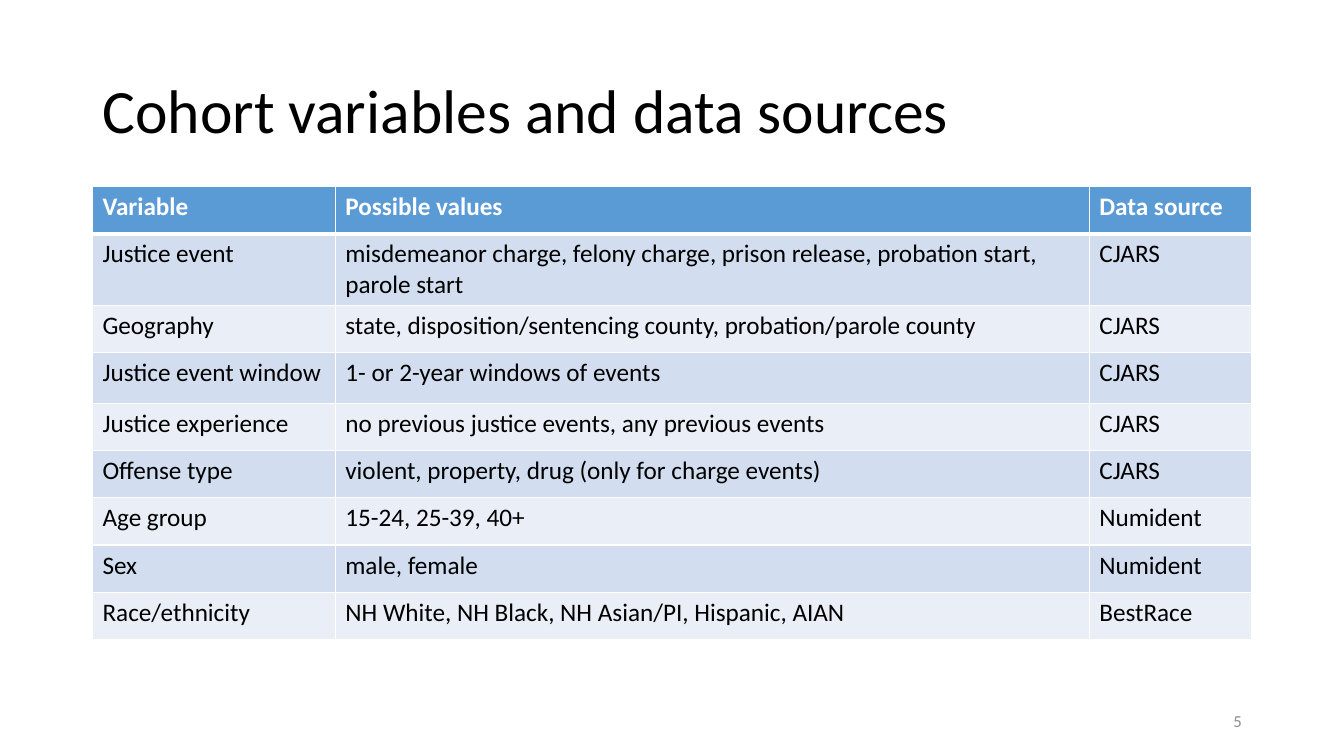
from lxml.etree import SubElement
from pptx import Presentation
from pptx.dml.color import RGBColor
from pptx.enum.text import MSO_ANCHOR as Anchor, MSO_AUTO_SIZE as AutoSize, PP_ALIGN as Align
from pptx.oxml.ns import qn
from pptx.util import Cm, Pt

FONT = "Calibri"
BLACK = RGBColor(0x00, 0x00, 0x00)
WHITE = RGBColor(0xFF, 0xFF, 0xFF)
GREY = RGBColor(0x8C, 0x8C, 0x8C)
HEADER_BLUE = RGBColor(0x5B, 0x9B, 0xD5)
BAND_DARK = RGBColor(0xD2, 0xDE, 0xEF)
BAND_LIGHT = RGBColor(0xEA, 0xEF, 0xF7)

MARGIN, CONTENT_WIDTH = 2.33, 29.21
COLUMN_WIDTHS = (6.12, 19, 4.09)
ROW_HEIGHTS = (1.19, 1.78, 1.19, 1.28, 1.19, 1.19, 1.19, 1.19, 1.19)

COHORT_ROWS = (
    ("Variable", "Possible values", "Data source"),
    ("Justice event",
     "misdemeanor charge, felony charge, prison release, probation start, parole start", "CJARS"),
    ("Geography", "state, disposition/sentencing county, probation/parole county", "CJARS"),
    ("Justice event window", "1- or 2-year windows of events", "CJARS"),
    ("Justice experience", "no previous justice events, any previous events", "CJARS"),
    ("Offense type", "violent, property, drug (only for charge events)", "CJARS"),
    ("Age group", "15-24, 25-39, 40+", "Numident"),
    ("Sex", "male, female", "Numident"),
    ("Race/ethnicity", "NH White, NH Black, NH Asian/PI, Hispanic, AIAN", "BestRace"),
)


def format_paragraph(paragraph, size, color, bold=False, align=Align.LEFT):
    paragraph.alignment = align
    font = paragraph.font
    font.name, font.size, font.bold = FONT, Pt(size), bold
    font.color.rgb = color


def set_borders(cell, widths):
    """Draw white borders; widths maps a side (L, R, T, B) to points."""
    properties = cell._tc.get_or_add_tcPr()
    for side, width in widths.items():
        line = SubElement(properties, qn(f"a:ln{side}"), w=str(Pt(width)))
        fill = SubElement(line, qn("a:solidFill"))
        SubElement(fill, qn("a:srgbClr"), val=str(WHITE))


def add_title(slide, text):
    title = slide.shapes.title
    title.left, title.top = Cm(MARGIN), Cm(1.01)
    title.width, title.height = Cm(CONTENT_WIDTH), Cm(3.68)
    frame = title.text_frame
    frame.text = text
    frame.auto_size = AutoSize.NONE
    frame.vertical_anchor = Anchor.MIDDLE
    heading = frame.paragraphs[0]
    heading.line_spacing = 0.9
    format_paragraph(heading, 44, BLACK)


def add_cohort_table(slide):
    table = slide.shapes.add_table(
        len(COHORT_ROWS), len(COLUMN_WIDTHS), Cm(MARGIN), Cm(4.7),
        Cm(CONTENT_WIDTH), Cm(sum(ROW_HEIGHTS))).table
    for column, width in zip(table.columns, COLUMN_WIDTHS):
        column.width = Cm(width)
    for row, height in zip(table.rows, ROW_HEIGHTS):
        row.height = Cm(height)

    for row_index, entries in enumerate(COHORT_ROWS):
        is_header = row_index == 0
        band = HEADER_BLUE if is_header else BAND_DARK if row_index % 2 else BAND_LIGHT
        # The header and the first data row share a thicker rule
        borders = {"L": 1, "R": 1, "T": 3 if row_index == 1 else 1, "B": 3 if is_header else 1}
        for column_index, entry in enumerate(entries):
            cell = table.cell(row_index, column_index)
            cell.text = entry
            format_paragraph(cell.text_frame.paragraphs[0], 18,
                             WHITE if is_header else BLACK, bold=is_header)
            set_borders(cell, borders)
            cell.fill.solid()
            cell.fill.fore_color.rgb = band


def add_page_number(slide, number):
    frame = slide.shapes.add_textbox(Cm(23.93), Cm(17.65), Cm(7.62), Cm(1.02)).text_frame
    frame.word_wrap = True
    frame.vertical_anchor = Anchor.MIDDLE
    frame.text = number
    format_paragraph(frame.paragraphs[0], 12, GREY, align=Align.RIGHT)


def main():
    deck = Presentation()
    deck.slide_width, deck.slide_height = Cm(33.87), Cm(19.05)
    slide = deck.slides.add_slide(deck.slide_layouts.get_by_name("Title Only"))

    # Heading, table and footer
    add_title(slide, "Cohort variables and data sources")
    add_cohort_table(slide)
    add_page_number(slide, "5")

    deck.save("out.pptx")


if __name__ == "__main__":
    main()
